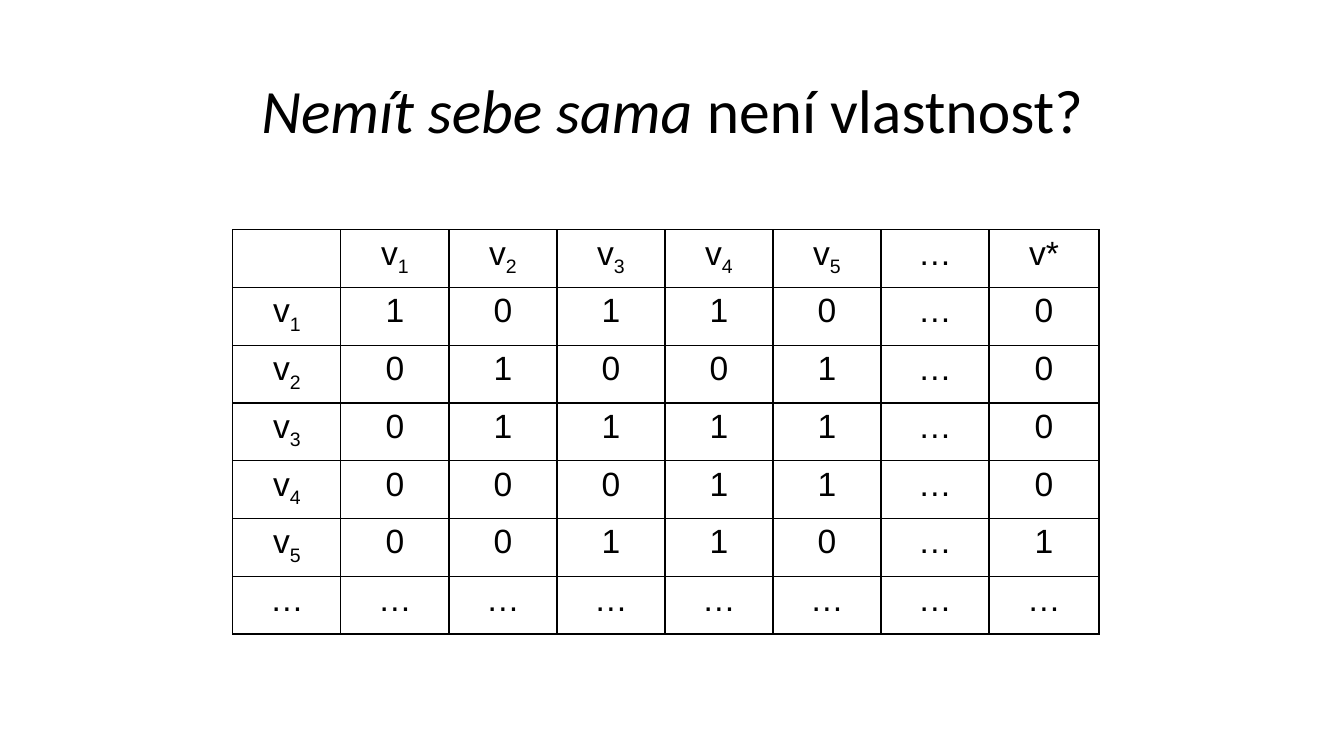
from lxml import etree
from pptx import Presentation
from pptx.dml.color import RGBColor
from pptx.enum import text
from pptx.oxml import ns
from pptx.util import Inches, Pt

COLORS = {"ink": "000000", "paper": "FFFFFF"}
INK = RGBColor.from_string(COLORS["ink"])
PAPER = RGBColor.from_string(COLORS["paper"])
ROW_HEIGHT = 4.01 / 7

PROPERTY_ROWS = [
    ["", "v1", "v2", "v3", "v4", "v5", "…"],
    ["v1", "1", "0", "1", "1", "0", "…"],
    ["v2", "0", "1", "0", "0", "1", "…"],
    ["v3", "0", "1", "1", "1", "1", "…"],
    ["v4", "0", "0", "0", "1", "1", "…"],
    ["v5", "0", "0", "1", "1", "0", "…"],
    ["…"] * 7,
]
DIAGONAL_ROWS = [[value] for value in ("v*", "0", "0", "0", "0", "1", "…")]


def fill_cell(cell, value):
    """Border and fill a cell; a digit after v becomes a subscript."""
    properties = cell._tc.get_or_add_tcPr()
    for side in ("lnL", "lnR", "lnT", "lnB"):
        border = etree.SubElement(properties, ns.qn(f"a:{side}"), w=str(Pt(1)))
        solid = etree.SubElement(border, ns.qn("a:solidFill"))
        etree.SubElement(solid, ns.qn("a:srgbClr"), val=COLORS["ink"])
    cell.fill.solid()
    cell.fill.fore_color.rgb = PAPER

    paragraph = cell.text_frame.paragraphs[0]
    paragraph.alignment = text.PP_ALIGN.CENTER
    paragraph.font.name = "Arial"
    paragraph.font.size = Pt(24)
    paragraph.font.color.rgb = INK
    for character in value:
        run = paragraph.add_run()
        run.text = character
        if value[0] == "v" and character.isdigit():
            run._r.get_or_add_rPr().set("baseline", "-25000")


def add_grid(slide, left, column_width, rows):
    columns = len(rows[0])
    grid = slide.shapes.add_table(
        len(rows), columns, Inches(left), Inches(2.28),
        Inches(column_width * columns), Inches(ROW_HEIGHT * len(rows))).table
    grid.first_row = False
    grid.horz_banding = False
    for column in grid.columns:
        column.width = Inches(column_width)
    for row, values in zip(grid.rows, rows):
        row.height = Inches(ROW_HEIGHT)
        for cell, value in zip(row.cells, values):
            fill_cell(cell, value)


prs = Presentation()
prs.slide_width = Inches(13.33)
prs.slide_height = Inches(7.5)
slide = prs.slides.add_slide(prs.slide_layouts[6])

title = slide.shapes.add_textbox(
    Inches(0.92), Inches(0.4), Inches(11.5), Inches(1.45)).text_frame
title.word_wrap = True
title.vertical_anchor = text.MSO_ANCHOR.MIDDLE
heading = title.paragraphs[0]
heading.alignment = text.PP_ALIGN.CENTER
heading.line_spacing = 0.9
heading.font.name = "Calibri"
heading.font.size = Pt(44)
heading.font.color.rgb = INK
for words, italic in (("Nemít sebe sama", True), (" není vlastnost?", False)):
    run = heading.add_run()
    run.text = words
    run.font.italic = italic

add_grid(slide, 2.31, 7.5 / 7, PROPERTY_ROWS)
add_grid(slide, 9.81, 1.09, DIAGONAL_ROWS)

prs.save("out.pptx")
